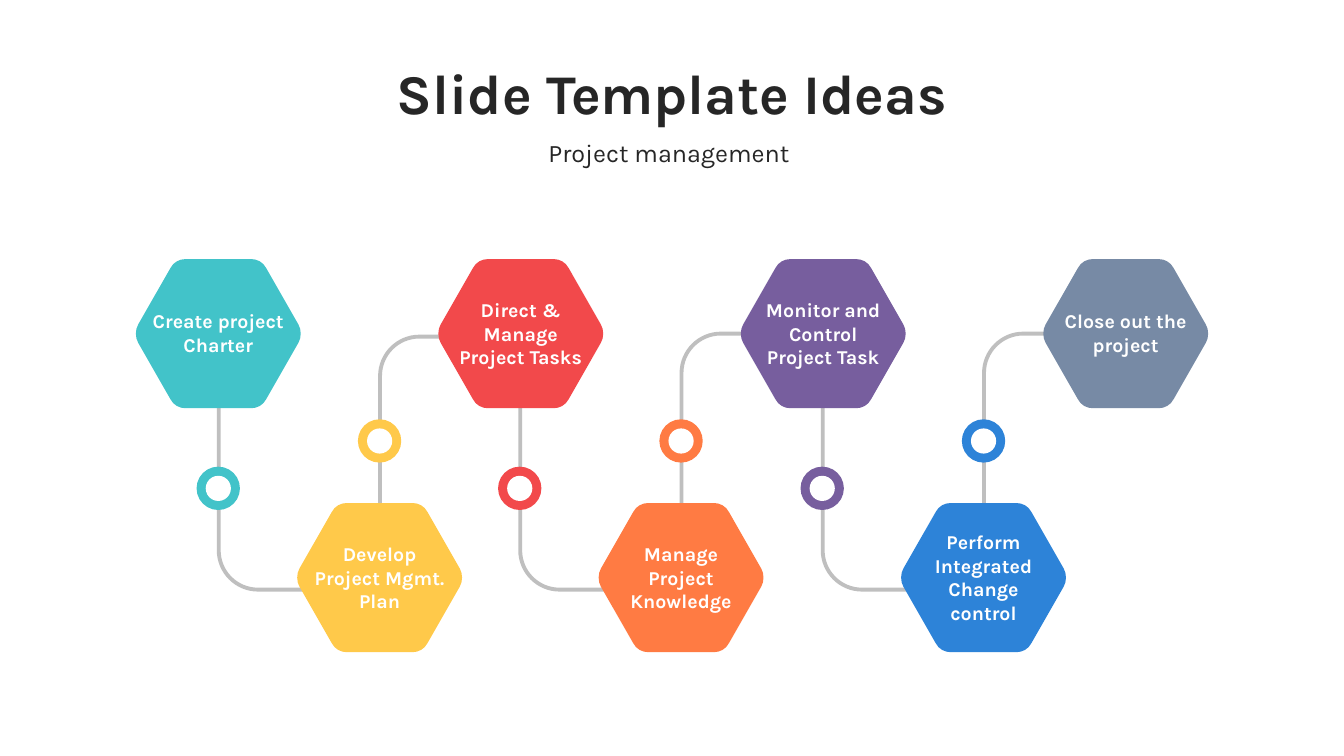
from pptx import Presentation
from pptx.dml.color import RGBColor as RGB
from pptx.enum.shapes import MSO_SHAPE as SHAPE
from pptx.enum.text import MSO_AUTO_SIZE as FIT, PP_ALIGN as ALIGN
from pptx.oxml.ns import qn
from pptx.util import Pt

PX = 9144  # 100 px to the inch
WIDE, HIGH = 1333, 750
FONT, INK, WHITE = "Karla", "262626", "FFFFFF"
GREY, CORE = "BFBFBF", "4A5D5A"

HEX_W, HEX_H = 165, 148
MID = 83  # hexagon's left side to its stem
RING, RIM = 43, 9

# Text, lines it takes, colour
STEPS = [
    ("Create project Charter", 2, "42C3C9"),
    ("Develop Project Mgmt. Plan", 3, "FFC94A"),
    ("Direct & Manage Project Tasks", 3, "F2494B"),
    ("Manage Project Knowledge", 3, "FF7B43"),
    ("Monitor and Control Project Task", 3, "775E9E"),
    ("Perform Integrated Change control", 4, "2D83D8"),
    ("Close out the project", 2, "778AA5"),
]


def px(n):
    return round(n * PX)


def color(code):
    return RGB.from_string(code)


def paint(shape, code):
    shape.shadow.inherit = False
    shape.fill.solid()
    shape.fill.fore_color.rgb = color(code)
    shape.line.fill.background()


def outline(slide, x, y, parts, code):
    """Closed shape: a part of one point is a line, of three a curve."""
    pts = [(px(x + dx), px(y + dy)) for part in parts for dx, dy in part]
    pen = slide.shapes.build_freeform(*pts[0], scale=1.0)
    pen.add_line_segments(pts[1:], close=True)
    shape = pen.convert_to_shape()
    paint(shape, code)

    # Merge each three points of a curve into one segment
    legs = iter(list(shape._element.iter(qn("a:lnTo"))))
    for part in parts[1:]:
        first, *rest = [next(legs) for _ in part]
        if rest:
            bend = first.makeelement(qn("a:cubicBezTo"), {})
            first.addprevious(bend)
            for leg in (first, *rest):
                bend.append(leg[0])
                leg.getparent().remove(leg)
    return shape


def label(slide, x, y, w, h, text, size, code, bold=False):
    box = slide.shapes.add_textbox(px(x), px(y), px(w), px(h))
    frame = box.text_frame
    frame.word_wrap = True
    frame.auto_size = FIT.SHAPE_TO_FIT_TEXT
    frame.text = text
    para = frame.paragraphs[0]
    para.alignment = ALIGN.CENTER
    font = para.runs[0].font
    font.name, font.size, font.bold = FONT, Pt(size), bold
    font.color.rgb = color(code)


def header(slide, x, y, w):
    label(slide, x, y, w, 77, "Slide Template Ideas", 40, INK, True)
    label(slide, x, y + 78, w, 40, "Project management ", 18, INK)


def pipe(slide, x, start, end, reach):
    """Thin band from start to end that bends right and runs on to reach."""
    s = 1 if end > start else -1
    rise = start - end
    parts = [
        [(reach, 0)],
        [(40, 0)],
        [(18, 0), (0, -18 * s), (0, -40 * s)],
        [(0, rise)],
        [(2, rise)],
        [(2, -40 * s)],
        [(2, -19 * s), (19, -2 * s), (40, -2 * s)],
        [(reach, -2 * s)],
    ]
    shape = outline(slide, x - 1, end, parts, CORE)
    shape.line.color.rgb = color(GREY)
    shape.line.width = Pt(1.34)


def hexagon(slide, x, y, code):
    parts = [
        [(115, 0)],
        [(50, 0)],
        [(44, 0), (38, 3), (35, 9)],
        [(3, 65)],
        [(0, 70), (0, 78), (3, 83)],
        [(35, 139)],
        [(38, 145), (44, 148), (50, 148)],
        [(115, 148)],
        [(121, 148), (127, 145), (130, 139)],
        [(162, 83)],
        [(165, 78), (165, 70), (162, 65)],
        [(130, 9)],
        [(127, 3), (121, 0), (115, 0)],
    ]
    outline(slide, x, y, parts, code)


def ring(slide, x, y, code):
    for gap, tone in ((0, code), (RIM, WHITE)):
        size = px(RING - 2 * gap)
        disc = slide.shapes.add_shape(SHAPE.OVAL, px(x + gap), px(y + gap),
                                      size, size)
        paint(disc, tone)


def flow(slide, x, y):
    """Two staggered rows of steps: even ones above, odd ones below."""
    low = y + 242
    spots, stems = [], []
    for i in range(len(STEPS)):
        pair, odd = divmod(i, 2)
        shift = pair * 599 // 2
        spots.append((x + 160 + shift, low) if odd else (x + pair * 300, y))
        stems.append(x + MID + shift + odd * 160)
    stems.pop()

    # Pipes lie behind the hexagons
    for i, stem in enumerate(stems):
        if i % 2:
            drop = 3 if i == 1 else 0
            pipe(slide, stem, low + 35 + drop, y + 73 + drop, 93)
        else:
            pipe(slide, stem, y + 109, low + 87, 123)

    for (left, top), (_, _, code) in zip(spots, STEPS):
        hexagon(slide, left, top, code)

    # Rings on the stems
    for i, stem in enumerate(stems):
        ring(slide, stem - 22, low - 83 if i % 2 else y + 206, STEPS[i][2])

    # Labels centred on the hexagons
    for (left, top), (text, lines, _) in zip(spots, STEPS):
        h = 10 + lines * 47 // 2
        label(slide, left + 6, top + (HEX_H - h) // 2, HEX_W - 12, h,
              text, 14, WHITE, True)


def main():
    deck = Presentation()
    deck.slide_width, deck.slide_height = px(WIDE), px(HIGH)
    slide = deck.slides.add_slide(deck.slide_layouts[6])
    header(slide, 0, 53, WIDE)
    flow(slide, 134, 257)
    deck.save("out.pptx")


if __name__ == "__main__":
    main()
